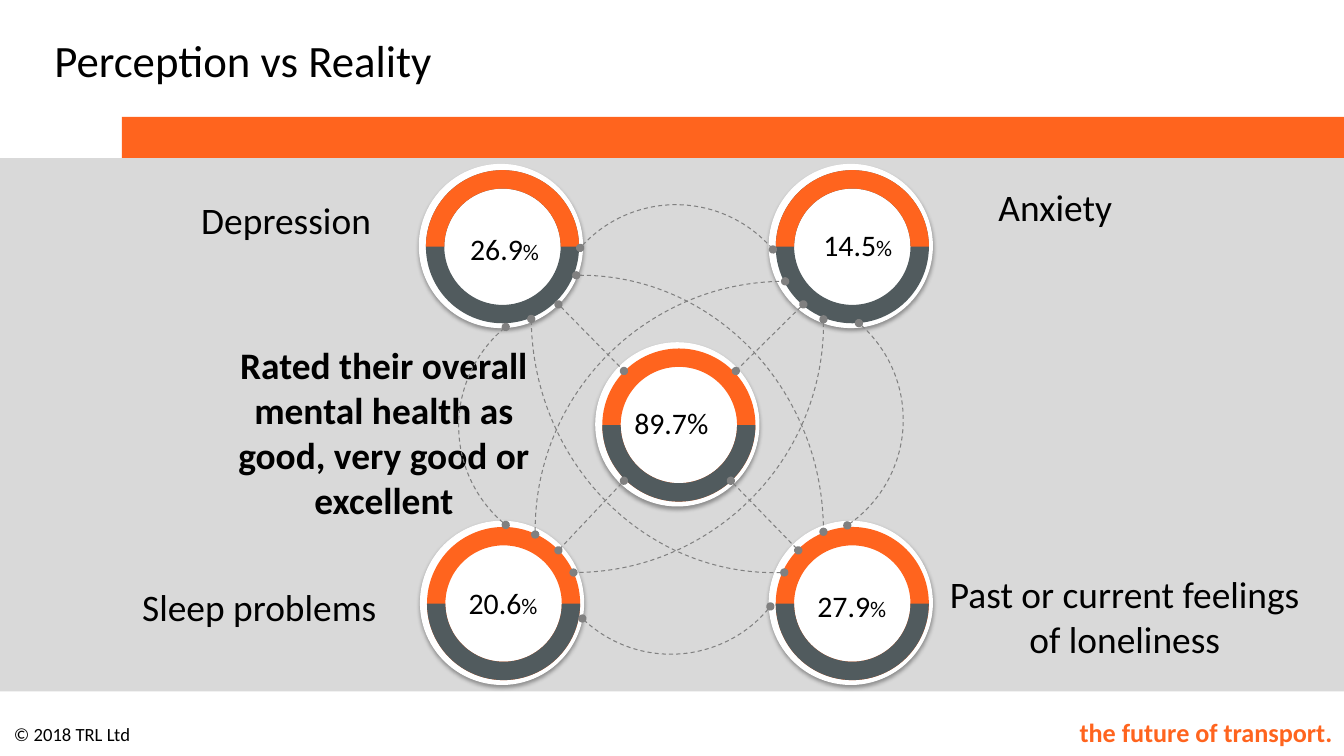
import pptx
import pptx.dml.color
import pptx.enum.dml
import pptx.enum.shapes
import pptx.enum.text
import pptx.oxml
import pptx.oxml.ns
import pptx.util

Pt = pptx.util.Pt
SHAPE = pptx.enum.shapes.MSO_SHAPE
ALIGN = pptx.enum.text.PP_ALIGN
ANCHOR = pptx.enum.text.MSO_ANCHOR

ORANGE, SLATE, GREY, PANEL = "FF641E", "515B5E", "808080", "D9D9D9"
BLACK, WHITE = "000000", "FFFFFF"
LABEL_SIZE, VALUE_SIZE, PERCENT_SIZE = 26.7, 21.3, 16

# box (left, top, width, height), text, size, format values, colour, anchor
TAGLINE = ((750.2, 508.3, 208.8, 30.2), "the future of transport.", 18.7,
           {"alignment": ALIGN.RIGHT}, {"bold": True}, ORANGE, ANCHOR.TOP)
COPYRIGHT = ((2.9, 512.6, 157, 23.8), "© 2018 TRL Ltd", 13.3,
             {}, {}, BLACK, ANCHOR.MIDDLE)
TITLE = ((31.7, 10.1, 718.6, 64.8), "Perception vs Reality", 32,
         {}, {}, BLACK, ANCHOR.MIDDLE)

BANDS = [((87.1, 83.5, 872.9, 32.4), ORANGE), ((0, 113, 960, 380.9), PANEL)]

# centre of each badge, and whether its ring is turned upside down
BADGES = [
    ((607.7, 175.7), True),
    ((483.8, 303.1), False),
    ((358.6, 430.6), False),
    ((607.7, 430.6), False),
    ((357.8, 175.7), True),
]
DISC, RING = 116.6, 109.4
RING_SHIFT = (1.1, 0.5)

LABELS = [
    ((119.5, 137.5, 169.9, 39.6), "Depression", False),
    ((141.8, 241.2, 265, 136.8),
     "Rated their overall mental health as good, very good or excellent", True),
    ((73.4, 414, 223.9, 39.6), "Sleep problems", False),
    ((666, 128.2, 175.7, 39.6), "Anxiety", False),
    ((667.4, 404.6, 272.2, 72), "Past or current feelings of loneliness", False),
]

# box, number, size of the percent sign
VALUES = [
    ((421.2, 285.8, 116.6, 33.1), "89.7", VALUE_SIZE),
    ((312.5, 161.3, 95.8, 33.1), "26.9", PERCENT_SIZE),
    ((566.6, 158.4, 92.2, 33.1), "14.5", PERCENT_SIZE),
    ((550.1, 416.2, 116.6, 33.1), "27.9", PERCENT_SIZE),
    ((304.6, 414, 109.4, 33.1), "20.6", PERCENT_SIZE),
]

SPOKES = [
    (398.9, 217.4, 445.7, 265),
    (445.7, 343.4, 398.9, 393.1),
    (522, 343.4, 570.2, 393.1),
    (573.8, 217.4, 525.6, 265),
]

# box, rotation, start and end angle in degrees
ARCS = [
    ((241.2, 196.6, 347, 366.5), 0, 269.03, 0),
    ((383, 200.2, 355.7, 357.1), 270, 269.03, 0),
    ((463, 208.8, 182.2, 182.2), 44.3, 266.41, 11.56),
    ((327.6, 213.1, 182.2, 182.2), 222.7, 266.41, 8.19),
    ((391.7, 146.2, 182.2, 182.2), 315, 266.41, 4.55),
    ((388.1, 285.1, 182.2, 182.2), 129.4, 269.31, 4.55),
    ((231.8, 52.6, 355.7, 357.1), 90, 269.03, 0),
    ((379.4, 42.5, 347, 366.5), 180, 267.73, 359.33),
]


def rgb(color):
    return pptx.dml.color.RGBColor.from_string(color)


def apply(target, values):
    for name, value in values.items():
        setattr(target, name, value)


def add_xml(parent, xml):
    """Append a DrawingML element, given without its namespace declaration."""
    tag, rest = xml.split(" ", 1)
    parent.append(pptx.oxml.parse_xml(f"{tag} {pptx.oxml.ns.nsdecls('a')} {rest}"))


def add_shape(kind, box, fill=None, line=None):
    shape = slide.shapes.add_shape(kind, *map(Pt, box))
    shape.shadow.inherit = False
    if fill:
        shape.fill.solid()
        shape.fill.fore_color.rgb = rgb(fill)
    else:
        shape.fill.background()
    if line:
        shape.line.color.rgb = rgb(line)
        shape.line.width = Pt(0.75)
    else:
        shape.line.fill.background()
    return shape


def add_text(box, spans, para_format, font_format, color=BLACK, anchor=ANCHOR.TOP):
    """Add a text box with one paragraph made of (text, size) spans."""
    frame = slide.shapes.add_textbox(*map(Pt, box)).text_frame
    apply(frame, {"word_wrap": True, "vertical_anchor": anchor})
    para = frame.paragraphs[0]
    apply(para, para_format)
    for text, size in spans:
        span = para.add_run()
        span.text = text
        apply(span.font, {"name": "Calibri", "size": Pt(size), **font_format})
        span.font.color.rgb = rgb(color)


def centred(center, size):
    return (center[0] - size / 2, center[1] - size / 2, size, size)


def style_link(link):
    """Make a line or arc thin, dashed and dotted at both ends."""
    link.line.color.rgb = rgb(GREY)
    apply(link.line, {"width": Pt(0.75),
                      "dash_style": pptx.enum.dml.MSO_LINE.DASH})
    outline = link.line._get_or_add_ln()
    for end in ("headEnd", "tailEnd"):
        add_xml(outline, f'<a:{end} type="oval"/>')


deck = pptx.Presentation()
apply(deck, {"slide_width": Pt(960), "slide_height": Pt(540)})
slide = deck.slides.add_slide(deck.slide_layouts[6])

for box, color in BANDS:
    add_shape(SHAPE.RECTANGLE, box, color)
for box, text, size, para_format, font_format, color, anchor in (
        TAGLINE, COPYRIGHT, TITLE):
    add_text(box, [(text, size)], para_format, font_format, color, anchor)

for center, _ in BADGES:
    disc = add_shape(SHAPE.OVAL, centred(center, DISC), WHITE, WHITE)
    effects = disc._element.spPr.find(pptx.oxml.ns.qn("a:effectLst"))
    add_xml(effects, f'<a:outerShdw blurRad="{Pt(3.1)}" dist="{Pt(1.8)}" '
                     'dir="5400000" rotWithShape="0"><a:srgbClr val="000000">'
                     '<a:alpha val="35000"/></a:srgbClr></a:outerShdw>')

centre_format = {"alignment": ALIGN.CENTER, "space_after": Pt(8)}
for box, text, bold in LABELS:
    add_text(box, [(text, LABEL_SIZE)], centre_format, {"bold": bold})

for center, turned in BADGES:
    ring_center = [a + b for a, b in zip(center, RING_SHIFT)]
    colors = (SLATE, ORANGE) if turned else (ORANGE, SLATE)
    for color, start in zip(colors, (108, 0.03)):
        ring = add_shape(SHAPE.BLOCK_ARC, centred(ring_center, RING), color)
        ring.rotation = 180 if turned else 0
        for index, value in enumerate((start, 108, 0.12)):
            ring.adjustments[index] = value

for ends in SPOKES:
    spoke = slide.shapes.add_connector(
        pptx.enum.shapes.MSO_CONNECTOR.STRAIGHT, *map(Pt, ends))
    style_link(spoke)
    add_xml(spoke._element.spPr, "<a:effectLst />")

for box, rotation, *angles in ARCS:
    arc = add_shape(SHAPE.ARC, box)
    arc.rotation = rotation
    for index, angle in enumerate(angles):
        arc.adjustments[index] = angle * 0.6
    style_link(arc)

for box, number, percent_size in VALUES:
    add_text(box, [(number, VALUE_SIZE), ("%", percent_size)], centre_format, {})

deck.save("out.pptx")
